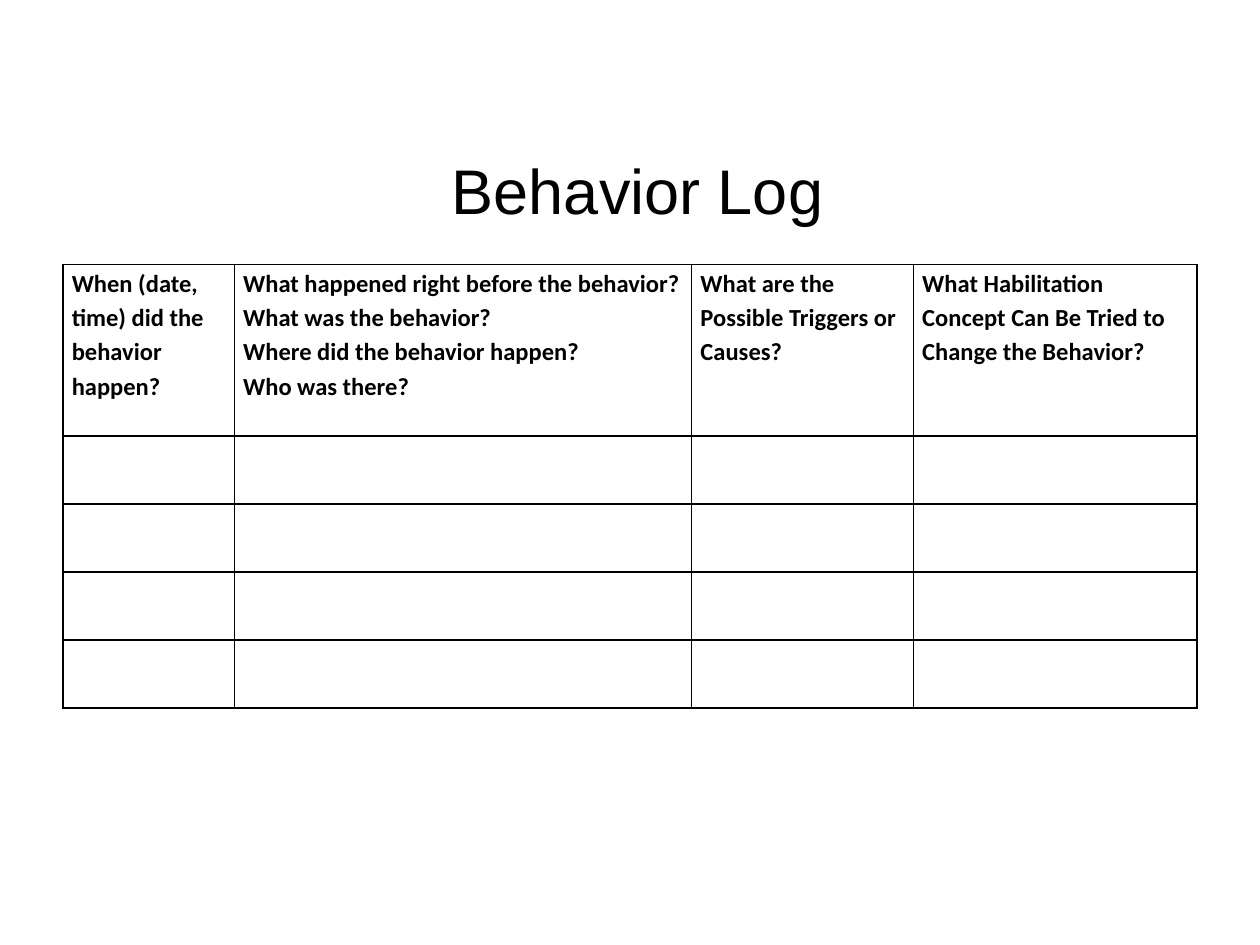
import pptx
import pptx.dml.color
import pptx.enum.text
import pptx.oxml.ns
import pptx.util
from lxml import etree
from pptx.util import Inches

BLACK = pptx.dml.color.RGBColor(0x00, 0x00, 0x00)
COLUMN_WIDTHS = [1.36, 3.63, 1.76, 2.25]
HEADER_HEIGHT = 1.36
ENTRY_HEIGHT = 0.54
ENTRY_COUNT = 4
HEADERS = [
    ["When (date, time) did the behavior happen?"],
    [
        "What happened right before the behavior?",
        "What was the behavior?",
        "Where did the behavior happen?",
        "Who was there?",
    ],
    ["What are the Possible Triggers or Causes?"],
    ["What Habilitation Concept Can Be Tried to Change the Behavior?"],
]


def set_font(p, name, size, bold=False):
    p.font.name = name
    p.font.size = pptx.util.Pt(size)
    p.font.bold = bold
    p.font.color.rgb = BLACK


def add_borders(cell):
    qn = pptx.oxml.ns.qn
    tc_pr = cell._tc.get_or_add_tcPr()
    for side in ("a:lnL", "a:lnR", "a:lnT", "a:lnB"):
        ln = etree.SubElement(tc_pr, qn(side), w=str(pptx.util.Pt(1)))
        fill = etree.SubElement(ln, qn("a:solidFill"))
        etree.SubElement(fill, qn("a:srgbClr"), val=str(BLACK))


def place_title(s, left, top, width, height):
    title = s.shapes.title
    title.left, title.top, title.width, title.height = left, top, width, height
    tf = title.text_frame
    tf.text = "Behavior Log"
    tf.word_wrap = True
    tf.auto_size = pptx.enum.text.MSO_AUTO_SIZE.SHAPE_TO_FIT_TEXT
    tf.vertical_anchor = pptx.enum.text.MSO_ANCHOR.TOP
    p = tf.paragraphs[0]
    p.alignment = pptx.enum.text.PP_ALIGN.CENTER
    set_font(p, "Arial", 36)


def fill_header(cell, lines):
    cell.margin_left = cell.margin_right = Inches(0.07)
    cell.margin_top = cell.margin_bottom = 0
    cell.text = "\n".join(lines)
    for p in cell.text_frame.paragraphs:
        p.line_spacing = 1.15
        set_font(p, "Calibri", 14, bold=True)


def place_log(s, left, top, width, height):
    frame = s.shapes.add_table(
        ENTRY_COUNT + 1, len(HEADERS), left, top, width, height
    )
    table = frame.table
    table.first_row = table.horz_banding = False
    for column, column_width in zip(table.columns, COLUMN_WIDTHS):
        column.width = Inches(column_width)
    for row in table.rows:
        row.height = Inches(ENTRY_HEIGHT)
    table.rows[0].height = Inches(HEADER_HEIGHT)
    for cell in table.iter_cells():
        add_borders(cell)
        cell.fill.background()
    for cell, lines in zip(table.rows[0].cells, HEADERS):
        fill_header(cell, lines)


def main():
    prs = pptx.Presentation()
    prs.slide_width, prs.slide_height = Inches(10), Inches(7.5)
    s = prs.slides.add_slide(prs.slide_layouts[5])
    place_title(s, Inches(0.89), Inches(1.15), Inches(8.34), Inches(0.71))
    log_height = HEADER_HEIGHT + ENTRY_COUNT * ENTRY_HEIGHT
    place_log(s, Inches(0.5), Inches(2.1), Inches(9), Inches(log_height))
    prs.save("out.pptx")


if __name__ == "__main__":
    main()
